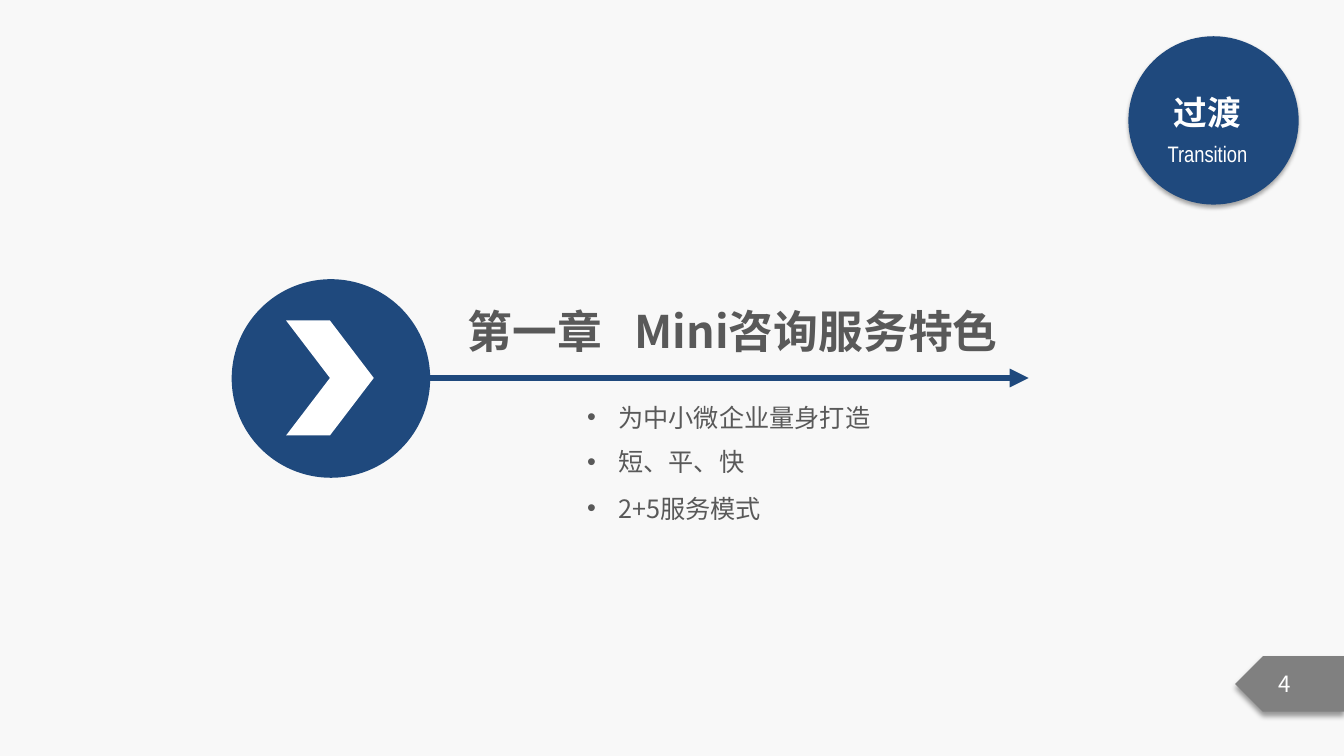
from lxml.etree import SubElement
from pptx import Presentation
from pptx.dml.color import RGBColor
from pptx.enum.shapes import MSO_CONNECTOR, MSO_SHAPE
from pptx.enum.text import MSO_ANCHOR, MSO_AUTO_SIZE, PP_ALIGN
from pptx.oxml.ns import qn
from pptx.util import Inches, Pt

COLORS = {
    "background": "F8F8F8",
    "navy": "1F497D",
    "gray": "808080",
    "text": "595959",
    "white": "FFFFFF",
    "shadow": "000000",
}
CJK_FONT = "Noto Sans CJK SC"


def add_filled_shape(kind, left, top, width, height, color, shadow=None):
    shape = slide.shapes.add_shape(kind, Inches(left), Inches(top), Inches(width), Inches(height))
    shape.shadow.inherit = False
    shape.fill.solid()
    shape.fill.fore_color.rgb = RGBColor.from_string(COLORS[color])
    shape.line.fill.background()
    if shadow:
        opacity, blur, distance = shadow
        effects = shape._element.spPr.find(qn("a:effectLst"))
        outer = SubElement(effects, qn("a:outerShdw"), blurRad=str(Pt(blur)),
                           dist=str(Pt(distance)), dir="5400000", algn="t", rotWithShape="0")
        tint = SubElement(outer, qn("a:srgbClr"), val=COLORS["shadow"])
        SubElement(tint, qn("a:alpha"), val=str(opacity * 1000))
    return shape


def write_text(box, text, size, font_name, color, bold=False, align=PP_ALIGN.LEFT):
    frame = box.text_frame
    frame.word_wrap = True
    frame.auto_size = MSO_AUTO_SIZE.NONE
    frame.vertical_anchor = MSO_ANCHOR.TOP
    frame.text = text
    paragraph = frame.paragraphs[0]
    paragraph.alignment = align
    for run in paragraph.runs:
        run.font.size = Pt(size)
        run.font.name = font_name
        run.font.bold = bold
        run.font.color.rgb = RGBColor.from_string(COLORS[color])
        SubElement(run._r.get_or_add_rPr(), qn("a:ea"), typeface=CJK_FONT)
    return paragraph


presentation = Presentation()
presentation.slide_width = Inches(13.34)
presentation.slide_height = Inches(7.5)
slide = presentation.slides.add_slide(presentation.slide_layouts[5])
slide.background.fill.solid()
slide.background.fill.fore_color.rgb = RGBColor.from_string(COLORS["background"])

add_filled_shape(MSO_SHAPE.OVAL, 11.2, 0.36, 1.69, 1.67, "navy", (35, 3.1, 1.8))
page_tag = add_filled_shape(MSO_SHAPE.PENTAGON, 12.26, 6.51, 1.08, 0.55, "gray", (40, 4, 3))
page_tag._element.spPr.find(qn("a:xfrm")).set("flipH", "1")

badge_labels = [
    ("Transition", 11.16, 1.34, 1.65, 0.37, 16, "Arial Narrow", False),
    ("过渡", 11.16, 0.86, 1.65, 0.5, 24, "Calibri", True),
    ("4", 12.4, 6.6, 0.71, 0.37, 16, CJK_FONT, False),
]
for text, left, top, width, height, size, font_name, bold in badge_labels:
    label = slide.shapes.add_textbox(Inches(left), Inches(top), Inches(width), Inches(height))
    write_text(label, text, size, font_name, "white", bold, PP_ALIGN.CENTER)

arrow = slide.shapes.add_connector(
    MSO_CONNECTOR.STRAIGHT, Inches(4.27), Inches(3.75), Inches(10.21), Inches(3.75))
arrow.line.color.rgb = RGBColor.from_string(COLORS["navy"])
arrow.line.width = Pt(4.5)
SubElement(arrow.line._get_or_add_ln(), qn("a:tailEnd"), type="triangle")
SubElement(arrow._element.spPr, qn("a:effectLst"))

title = slide.shapes.title
title.left, title.top, title.width, title.height = (
    Inches(4.54), Inches(2.96), Inches(5.59), Inches(0.63))
title_paragraph = write_text(title, "第一章\tMini咨询服务特色", 32, CJK_FONT, "text", True)
tab_list = SubElement(title_paragraph._p.get_or_add_pPr(), qn("a:tabLst"))
SubElement(tab_list, qn("a:tab"), pos=str(Inches(1.66)), algn="l")

for text, top in [("为中小微企业量身打造", 3.94), ("短、平、快", 4.38), ("2+5服务模式", 4.84)]:
    topic = slide.shapes.add_textbox(Inches(5.73), Inches(top), Inches(3.94), Inches(0.4))
    paragraph = write_text(topic, text, 18, CJK_FONT, "text")
    properties = paragraph._p.get_or_add_pPr()
    properties.set("marL", str(Inches(0.31)))
    properties.set("indent", str(-Inches(0.31)))
    SubElement(properties, qn("a:buFont"), typeface="Arial")
    SubElement(properties, qn("a:buChar"), char="•")

add_filled_shape(MSO_SHAPE.OVAL, 2.3, 2.77, 1.97, 1.97, "navy")
add_filled_shape(MSO_SHAPE.CHEVRON, 2.84, 3.18, 0.87, 1.14, "white")

presentation.save("out.pptx")
